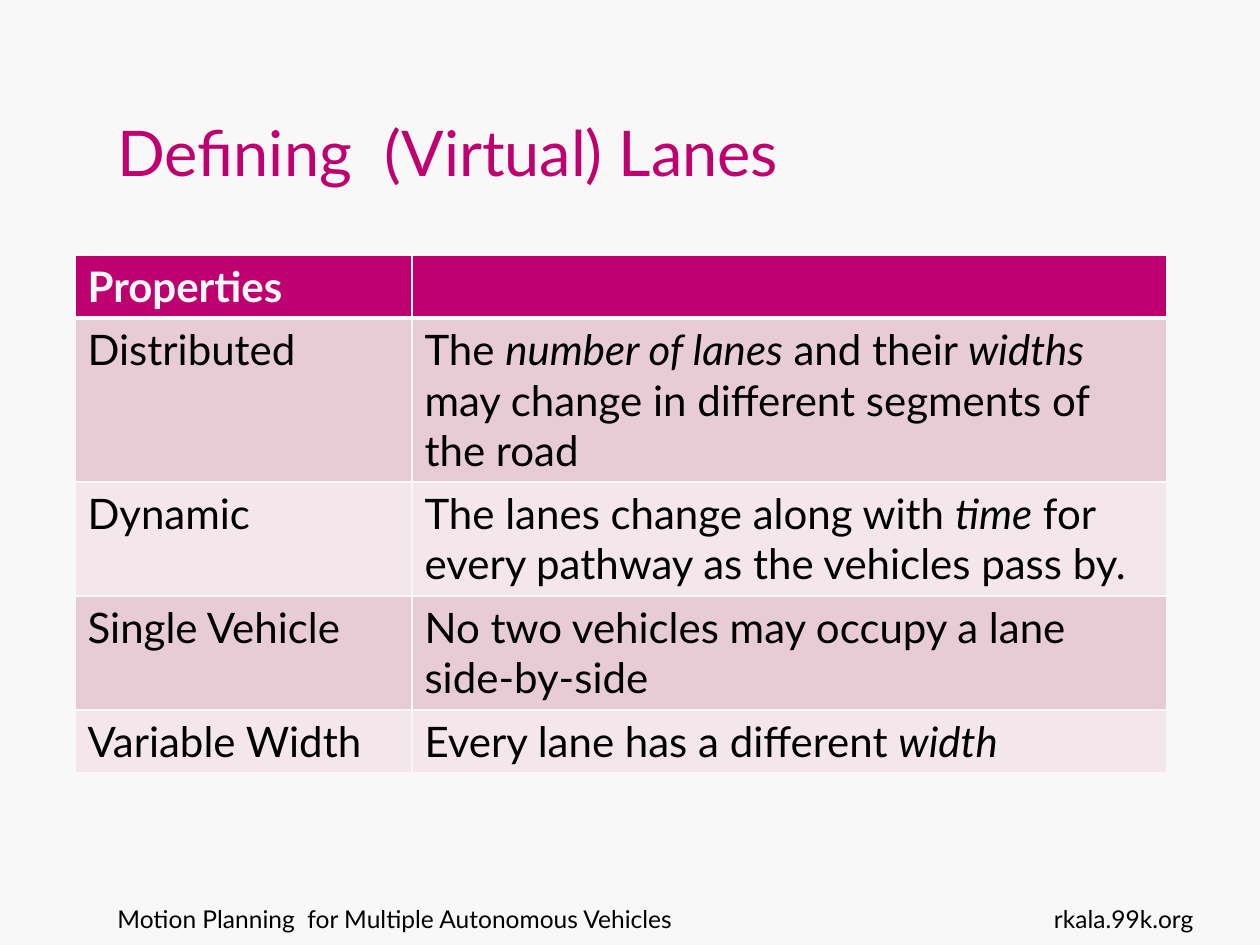
"""Build a slide with a table of virtual lane properties."""
from lxml.etree import SubElement
from pptx import Presentation
from pptx.dml.color import RGBColor
from pptx.enum.text import MSO_ANCHOR, PP_ALIGN
from pptx.oxml.ns import qn
from pptx.util import Pt

PIXEL = 914400 // 126
FONT = "Lato"
COLORS = {
    "background": "F8F8F8",
    "accent": "BF0071",
    "text": "000000",
    "band_dark": "E8CCD5",
    "band_light": "F4E7EB",
}

TEXT_BOXES = [
    {"text": "Defining  (Virtual) Lanes", "box": (105, 38, 853, 157), "size": 36,
     "color": "accent", "anchor": MSO_ANCHOR.BOTTOM, "align": PP_ALIGN.LEFT},
    {"text": "Motion Planning  for Multiple Autonomous Vehicles", "box": (105, 898, 873, 66),
     "size": 14, "color": "text", "anchor": MSO_ANCHOR.TOP, "align": PP_ALIGN.LEFT},
    {"text": "rkala.99k.org", "box": (1017, 898, 189, 66), "size": 14,
     "color": "text", "anchor": MSO_ANCHOR.TOP, "align": PP_ALIGN.RIGHT},
]

ITALIC_MARK = "*"
TABLE_ORIGIN = (75, 255)
COLUMN_WIDTHS = (337, 755)
ROWS = [
    (62, "Properties", ""),
    (163, "Distributed",
     "The *number of lanes* and their *widths* may change in different segments of the road"),
    (114, "Dynamic",
     "The lanes change along with *time* for every pathway as the vehicles pass by."),
    (114, "Single Vehicle", "No two vehicles may occupy a lane side-by-side"),
    (62, "Variable Width", "Every lane has a different *width*"),
]


def px(*lengths):
    return [length * PIXEL for length in lengths]


def rgb(name):
    return RGBColor.from_string(COLORS[name])


def add_runs(paragraph, text, color, **font_values):
    for index, part in enumerate(text.split(ITALIC_MARK)):
        if part:
            run = paragraph.add_run()
            run.text = part
            values = {"name": FONT, "italic": index % 2 == 1, **font_values}
            for attribute, value in values.items():
                setattr(run.font, attribute, value)
            run.font.color.rgb = rgb(color)


def add_text_box(slide, item):
    frame = slide.shapes.add_textbox(*px(*item["box"])).text_frame
    frame.word_wrap = True
    frame.vertical_anchor = item["anchor"]
    paragraph = frame.paragraphs[0]
    paragraph.alignment = item["align"]
    add_runs(paragraph, item["text"], item["color"], size=Pt(item["size"]))


def add_borders(cell, widths):
    properties = cell._tc.get_or_add_tcPr()
    for side, width in widths.items():
        line = SubElement(properties, qn(f"a:ln{side}"), w=str(Pt(width)))
        fill = SubElement(line, qn("a:solidFill"))
        SubElement(fill, qn("a:srgbClr"), val=COLORS["background"])


def add_lane_table(slide):
    heights = [row[0] for row in ROWS]
    size = (sum(COLUMN_WIDTHS), sum(heights))
    table = slide.shapes.add_table(
        len(ROWS), len(COLUMN_WIDTHS), *px(*TABLE_ORIGIN, *size)).table
    for column, width in zip(table.columns, px(*COLUMN_WIDTHS)):
        column.width = width
    for row_index, (height, *texts) in enumerate(ROWS):
        header = row_index == 0
        band = "band_dark" if row_index % 2 else "band_light"
        table.rows[row_index].height = px(height)[0]
        for column_index, text in enumerate(texts):
            cell = table.cell(row_index, column_index)
            add_borders(cell, {"L": 1, "R": 1, "T": 3 if row_index == 1 else 1,
                               "B": 3 if header else 1})
            cell.fill.solid()
            cell.fill.fore_color.rgb = rgb("accent" if header else band)
            add_runs(cell.text_frame.paragraphs[0], text,
                     "background" if header else "text", size=Pt(24), bold=header)


def main():
    presentation = Presentation()
    presentation.slide_width, presentation.slide_height = px(1260, 945)
    slide = presentation.slides.add_slide(presentation.slide_layouts[6])
    slide.background.fill.solid()
    slide.background.fill.fore_color.rgb = rgb("background")
    for item in TEXT_BOXES:
        add_text_box(slide, item)
    add_lane_table(slide)
    presentation.save("out.pptx")


if __name__ == "__main__":
    main()
